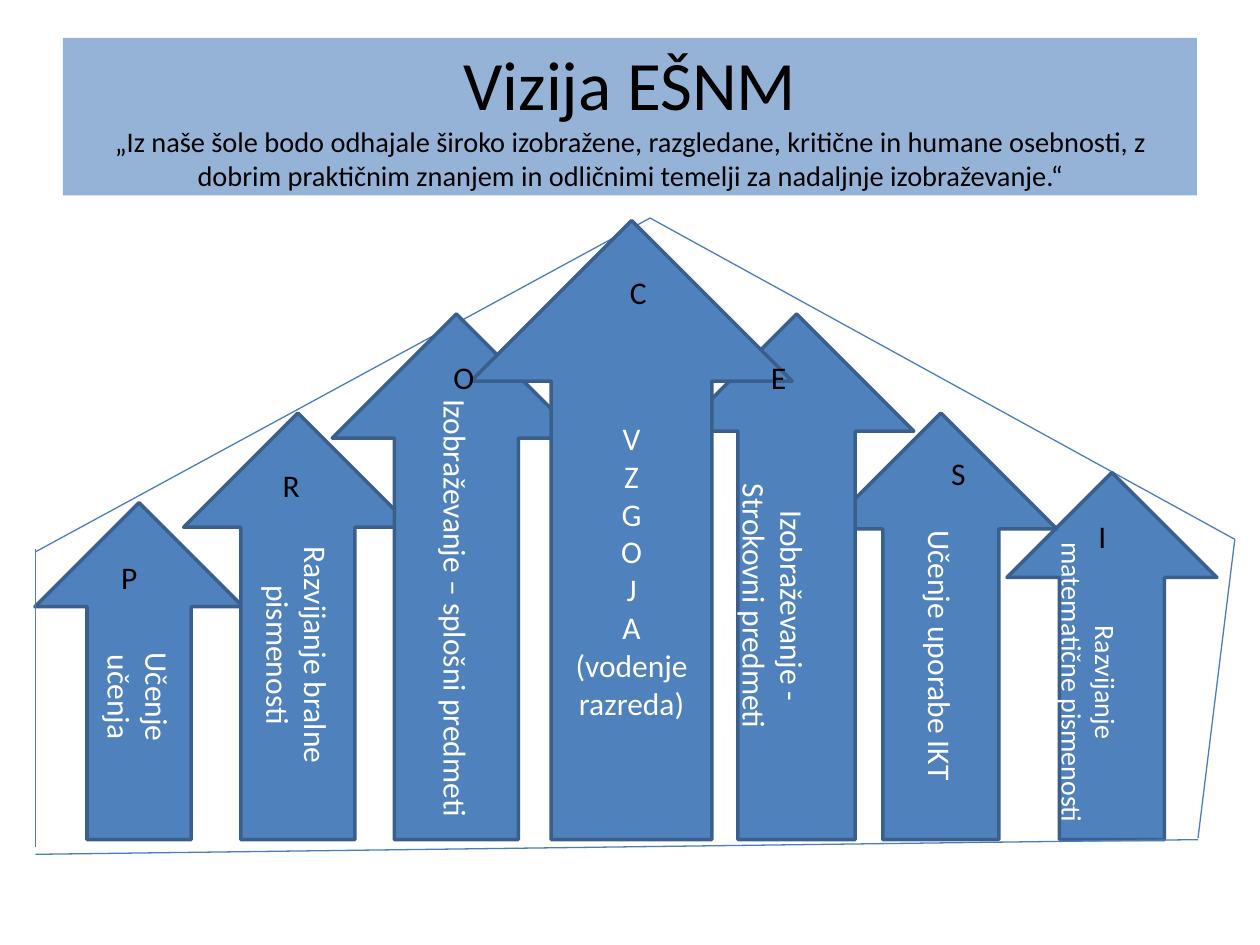
from lxml import etree
from pptx import Presentation
from pptx import util as u
from pptx.dml.color import RGBColor
from pptx.enum import shapes, text
from pptx.oxml.ns import qn

Pt = u.Pt
FONT = "Calibri"
BLACK, WHITE = "000000", "FFFFFF"
BAND, BLUE, EDGE, ROOF = "95B3D7", "4F81BD", "3A5F8C", "4B7EBC"
MID = text.PP_ALIGN.CENTER


def color(code):
    return RGBColor.from_string(code)


def add_run(para, words, size, code):
    run = para.add_run()
    run.text = words
    run.font.name = FONT
    run.font.size = Pt(size)
    run.font.color.rgb = color(code)


def add_form(slide, kind, box, fill, edge=None):
    form = slide.shapes.add_shape(kind, *map(Pt, box))
    form.shadow.inherit = False
    form.fill.solid()
    form.fill.fore_color.rgb = color(fill)
    if edge:
        form.line.color.rgb = color(edge)
        form.line.width = Pt(2)
    else:
        form.line.fill.background()
    frame = form.text_frame
    frame.word_wrap = True
    frame.vertical_anchor = text.MSO_ANCHOR.MIDDLE
    return frame


def add_title(slide, box, head, motto):
    frame = add_form(slide, shapes.MSO_SHAPE.RECTANGLE, box, BAND)
    para = frame.paragraphs[0]
    para.alignment = MID
    add_run(para, head, 39.6, BLACK)
    para.add_line_break()
    add_run(para, motto, 16.2, BLACK)


def add_line(slide, start, end):
    line = slide.shapes.add_connector(
        shapes.MSO_CONNECTOR.STRAIGHT, *map(Pt, start + end))
    line.line.color.rgb = color(ROOF)
    line.line.width = Pt(0.75)
    etree.SubElement(line._element.spPr, qn("a:effectLst"))


def add_arrow(slide, box, lines, size=18, turned=True, pad=0):
    frame = add_form(slide, shapes.MSO_SHAPE.UP_ARROW, box, BLUE, EDGE)
    if turned:
        frame._txBody.bodyPr.set("vert", "vert")
    # Extra right inset pushes turned lines to the left
    frame.margin_right = Pt(7.2 + pad)
    for i, words in enumerate(lines):
        para = frame.add_paragraph() if i else frame.paragraphs[0]
        para.alignment = MID
        add_run(para, words, size, WHITE)


def add_mark(slide, left, top, letter):
    box = slide.shapes.add_textbox(Pt(left), Pt(top), Pt(36), Pt(29))
    box.text_frame.word_wrap = True
    add_run(box.text_frame.paragraphs[0], letter, 18, BLACK)


def add_house(slide, base):
    # Roof
    peak, eave = (371.5, 124.6), (705.6, 308.2)
    add_line(slide, (20.2, 315.4), peak)
    add_line(slide, peak, eave)

    # Arrows from back to front, all standing on the base
    arrows = [
        (20, 287.2, 119, ["Učenje", "učenja"], {}),
        (575.4, 270, 120, ["Razvijanje", "matematične pismenosti"],
         {"size": 16, "pad": 22}),
        (105, 236, 130.5, ["Razvijanje bralne pismenosti"], {}),
        (471.4, 236, 132.5, ["Učenje uporabe IKT"], {}),
        (189.9, 179.4, 141.8, ["Izobraževanje – splošni predmeti"], {}),
        (388.2, 179.4, 134, ["Izobraževanje -", "Strokovni predmeti"],
         {"pad": 22}),
        (269.1, 126, 183.6, [*"VZGOJA", "(vodenje razreda)"],
         {"turned": False}),
    ]
    for left, top, width, lines, opts in arrows:
        add_arrow(slide, (left, top, width, base - top), lines, **opts)

    # Walls and floor
    add_line(slide, (20.2, 313.9), (20.2, 484.2))
    add_line(slide, (20.2, 488.2), (684.6, base))
    add_line(slide, (684.6, 478.8), eave)

    # Letters on the arrow heads
    marks = [(62.1, 315.4, "P"), (154.5, 262.8, "R"), (252, 200.9, "O"),
             (352.8, 152.4, "C"), (433.4, 200.9, "E"),
             (536.4, 255.6, "S"), (620.6, 291.9, "I")]
    for mark in marks:
        add_mark(slide, *mark)


def main():
    deck = Presentation()
    deck.slide_width, deck.slide_height = Pt(720), Pt(540)
    slide = deck.slides.add_slide(deck.slide_layouts[6])
    add_title(slide, (36, 21.6, 648, 90), "Vizija EŠNM",
              "„Iz naše šole bodo odhajale široko izobražene, razgledane, "
              "kritične in humane osebnosti, z dobrim praktičnim znanjem in "
              "odličnimi temelji za nadaljnje izobraževanje.“")
    add_house(slide, 479.8)
    deck.save("out.pptx")


if __name__ == "__main__":
    main()
